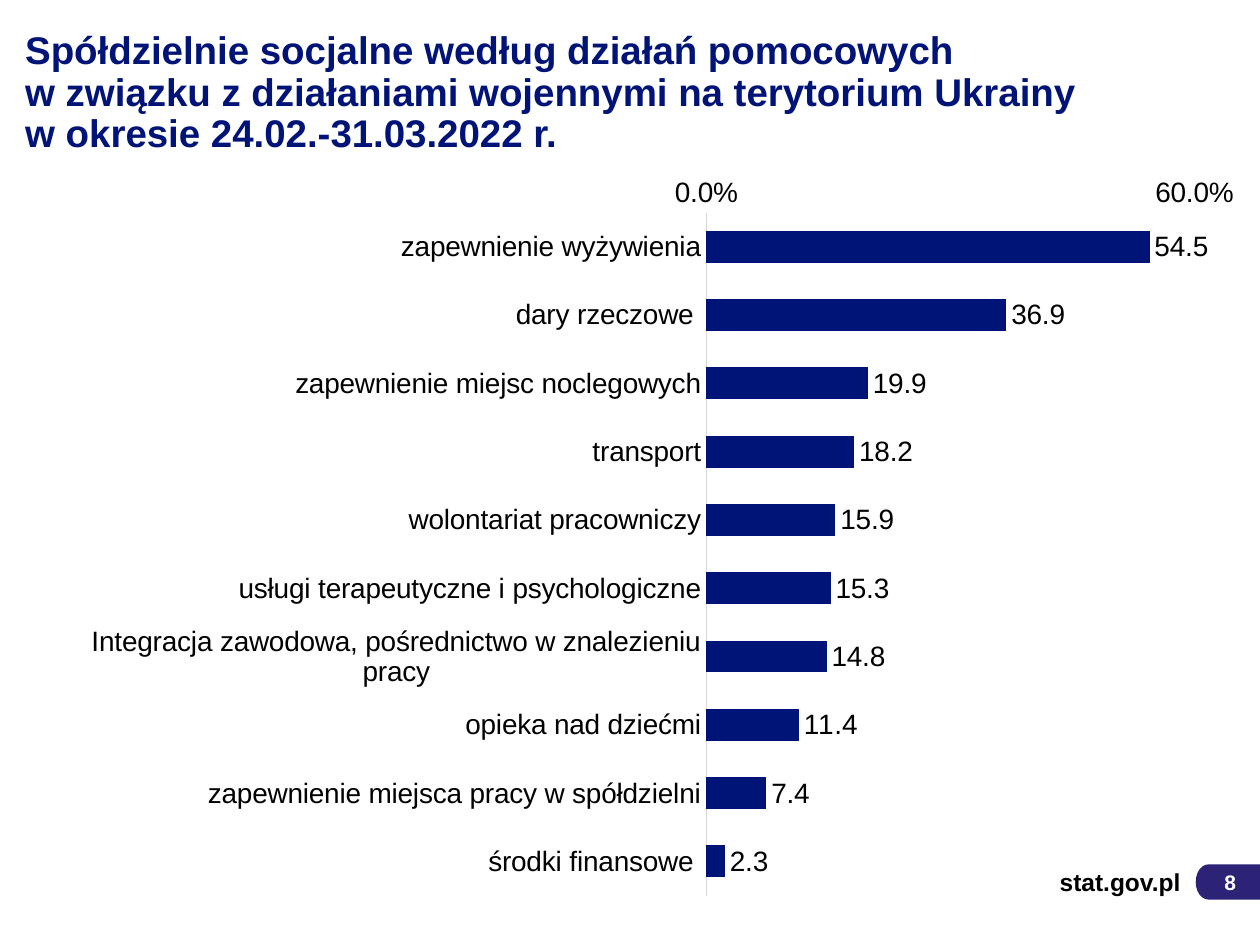
import pptx
import pptx.util
import pptx.chart.data
import pptx.dml.color
import pptx.enum.chart
import pptx.enum.shapes
import pptx.enum.text
import pptx.oxml
import pptx.oxml.ns

HUES = {"navy": "001377", "badge": "2C2276", "black": "000000",
        "white": "FFFFFF", "axis": "D9D9D9"}
FACE = "Arial"
ALIGN = pptx.enum.text.PP_ALIGN
ANCHOR = pptx.enum.text.MSO_ANCHOR
KIND = pptx.enum.chart

deck = pptx.Presentation()
deck.slide_width = pptx.util.Inches(10)
deck.slide_height = pptx.util.Inches(7.5)
slide = deck.slides.add_slide(deck.slide_layouts[6])
shapes = slide.shapes


def area(left, top, width, height):
    """Turn percent shares of the slide into lengths."""
    wide, high = deck.slide_width / 100, deck.slide_height / 100
    return [round(n) for n in (left * wide, top * high, width * wide, height * high)]


def write(shape, text, size, hue, align=ALIGN.LEFT, anchor=ANCHOR.MIDDLE,
          pads=(0, 0), space=1.0):
    frame = shape.text_frame
    frame.word_wrap = True
    frame.vertical_anchor = anchor
    frame.margin_left, frame.margin_right = [pptx.util.Inches(p) for p in pads]
    frame.margin_top = frame.margin_bottom = pptx.util.Inches(0.05)
    para = frame.paragraphs[0]
    para.text = text
    para.alignment = align
    para.line_spacing = space
    for run in para.runs:
        run.font.name, run.font.size, run.font.bold = FACE, pptx.util.Pt(size), True
        run.font.color.rgb = pptx.dml.color.RGBColor.from_string(HUES[hue])


# Page badge and site address
badge = shapes.add_shape(pptx.enum.shapes.MSO_SHAPE.FLOWCHART_TERMINATOR,
                         *area(94.9, 91.47, 6.3, 3.73))
badge.shadow.inherit = False
badge.fill.solid()
badge.fill.fore_color.rgb = pptx.dml.color.RGBColor.from_string(HUES["badge"])
badge.line.fill.background()
write(badge, "8", 12, "white", align=ALIGN.RIGHT, pads=(0.04, 0.28))

site = shapes.add_textbox(*area(81.9, 91.07, 11.8, 4.53))
write(site, "stat.gov.pl", 14, "black", align=ALIGN.RIGHT)

# Title
title = shapes.add_textbox(*area(2, -1.73, 94.5, 18.93))
write(title, "Spółdzielnie socjalne według działań pomocowych\v"
      "w związku z działaniami wojennymi na terytorium Ukrainy\v"
      "w okresie 24.02.-31.03.2022 r.",
      22, "navy", anchor=ANCHOR.BOTTOM, space=0.9)

# Chart data
rows = [
    ("zapewnienie wyżywienia", 54.5),
    ("dary rzeczowe ", 36.9),
    ("zapewnienie miejsc noclegowych", 19.9),
    ("transport", 18.2),
    ("wolontariat pracowniczy", 15.9),
    ("usługi terapeutyczne i psychologiczne", 15.3),
    ("Integracja zawodowa, pośrednictwo w znalezieniu pracy", 14.8),
    ("opieka nad dziećmi", 11.4),
    ("zapewnienie miejsca pracy w spółdzielni", 7.4),
    ("środki finansowe ", 2.3),
]
data = pptx.chart.data.CategoryChartData()
data.categories = [name for name, share in rows]
data.add_series("Series 1", [share for name, share in rows])
chart = shapes.add_chart(KIND.XL_CHART_TYPE.BAR_CLUSTERED,
                         *area(5.4, 17.2, 94.5, 79.33), data).chart
chart.has_legend = False
chart.has_title = False

# Bars and their labels
plot = chart.plots[0]
plot.gap_width = 114
plot.vary_by_categories = False
bars = plot.series[0].format.fill
bars.solid()
bars.fore_color.rgb = pptx.dml.color.RGBColor.from_string(HUES["navy"])
plot.has_data_labels = True
labels = plot.data_labels
labels.show_value = True
labels.position = KIND.XL_LABEL_POSITION.OUTSIDE_END
labels.number_format = "0.0"
labels.number_format_is_linked = False

# Axes
names, scale = chart.category_axis, chart.value_axis
names.reverse_order = True
names.format.line.color.rgb = pptx.dml.color.RGBColor.from_string(HUES["axis"])
names.format.line.width = pptx.util.Pt(0.75)
scale.minimum_scale, scale.maximum_scale, scale.major_unit = 0, 60, 60
scale.format.line.fill.background()
scale.tick_labels.number_format = '#,##0.0"%"'
scale.tick_labels.number_format_is_linked = False
for axis in (names, scale):
    axis.has_major_gridlines = False
    axis.major_tick_mark = axis.minor_tick_mark = KIND.XL_TICK_MARK.NONE

for font in (chart.font, labels.font, names.tick_labels.font, scale.tick_labels.font):
    font.name, font.size = FACE, pptx.util.Pt(16)
    font.color.rgb = pptx.dml.color.RGBColor.from_string(HUES["black"])

# Fixed place of the bars within the chart
field = chart.element.find(".//" + pptx.oxml.ns.qn("c:plotArea"))
for old in field.findall(pptx.oxml.ns.qn("c:layout")):
    field.remove(old)
marks = [("layoutTarget", "inner"), ("xMode", "edge"), ("yMode", "edge"),
         ("x", 0.536), ("y", 0.067), ("w", 0.41), ("h", 0.911)]
inner = "".join(f'<c:{tag} val="{val}"/>' for tag, val in marks)
field.insert(0, pptx.oxml.parse_xml(
    f'<c:layout {pptx.oxml.ns.nsdecls("c")}><c:manualLayout>{inner}'
    '</c:manualLayout></c:layout>'))

deck.save("out.pptx")
